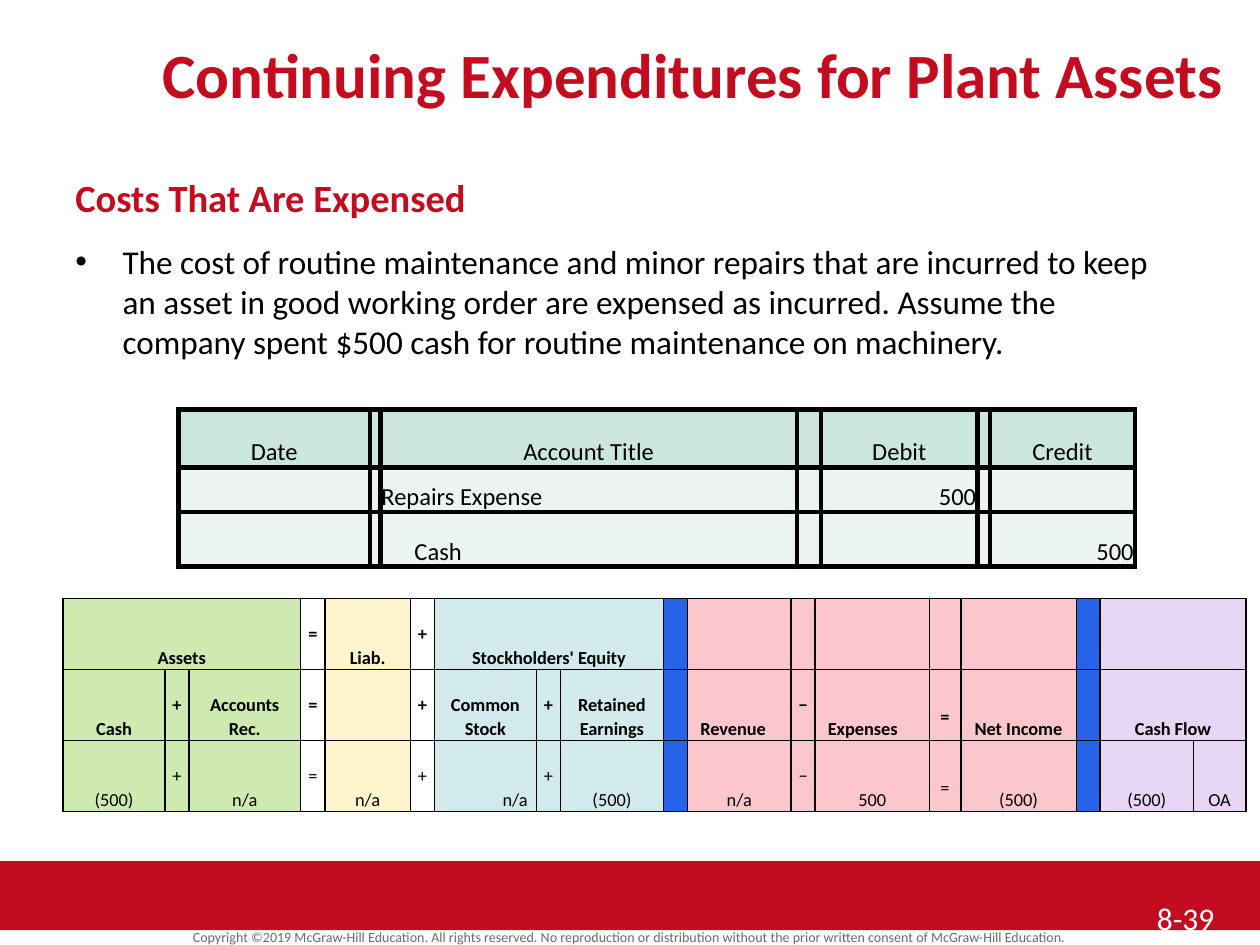
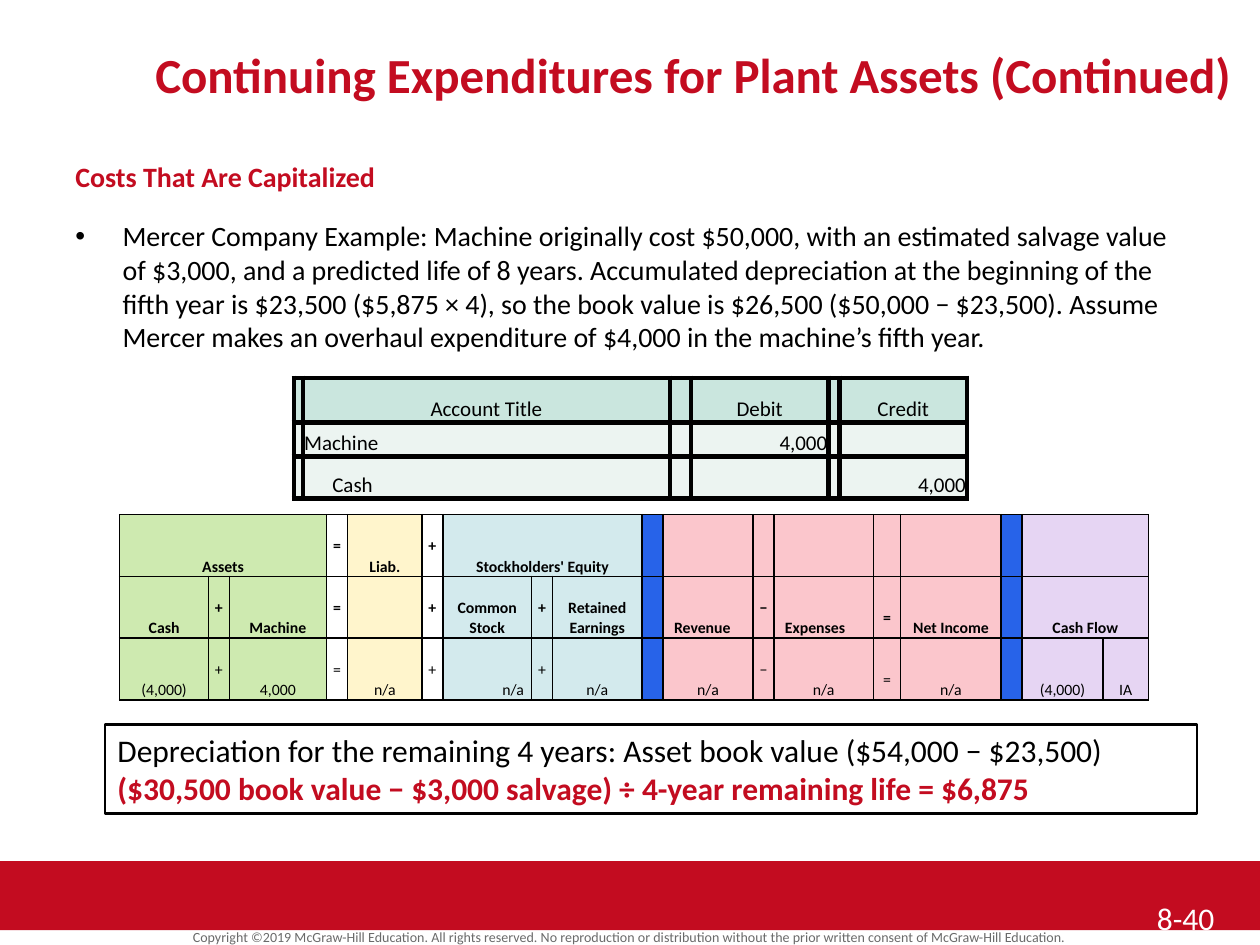
"""Build two slides on continuing expenditures for plant assets."""
import lxml.etree
import pptx
import pptx.dml.color
import pptx.enum.shapes
import pptx.enum.text
import pptx.oxml.ns
import pptx.util

Pt = pptx.util.Pt
qn = pptx.oxml.ns.qn
ALIGN = pptx.enum.text.PP_ALIGN
ANCHOR = pptx.enum.text.MSO_ANCHOR
RECT = pptx.enum.shapes.MSO_SHAPE.RECTANGLE

RED = "C30C20"
BLACK = "000000"
WHITE = "FFFFFF"
GREY = "6A6A6A"
HEAD = "CAE6DE"
PALE = "ECF4F1"
TINTS = {"G": "CEEAB0", "Y": "FFF5CC", "T": "D3EAED",
         "B": "2763E9", "P": "FBC6CC", "V": "E6D5F3"}
BANDS = "GGG-Y-TTTBPPPPPBVV"
MERGES = [(0, 0, 2), (0, 6, 8), (0, 16, 17), (1, 16, 17)]
SIGNS = "+=−"
SPANS = [58.3, 13.7, 63.8, 14, 48.8, 13.7, 58.3, 13.7, 59,
         13.7, 59.2, 13.7, 65.3, 18, 66, 13.7, 53.2, 30]
COLS = [109.5, 5.8, 238.3, 13.7, 89.3, 7.2, 82.8]
RISES = [33.1, 25.5, 31.2]
COPY = ("Copyright ©2019 McGraw-Hill Education. All rights reserved. "
        "No reproduction or distribution without the prior written "
        "consent of McGraw-Hill Education.")
TOP = ["Assets", "", "", "=", "Liab.", "+", "Stockholders' Equity"] + [""] * 11

PAGES = [
    {
        "title": "Continuing Expenditures for Plant Assets", "size": 36,
        "lead": "Costs That Are Expensed", "leadsize": 22, "leadgap": 1,
        "text": "The cost of routine maintenance and minor repairs that are "
                "incurred to keep an asset in good working order are expensed "
                "as incurred. Assume the company spent $500 cash for routine "
                "maintenance on machinery.",
        "textsize": 19, "before": 4, "number": "8-39",
        "asset": "Accounts Rec.",
        "values": ["(500)", "n/a", "n/a", "n/a", "(500)", "n/a", "500",
                   "(500)", "(500)", "OA"],
        "grid": (36, 342, 1, 10.5),
        "book": (102, 234, COLS, 1, 14),
        "entry": ("Repairs Expense", "500"), "note": [],
    },
    {
        "title": "Continuing Expenditures for Plant Assets (Continued)",
        "size": 28,
        "lead": "Costs That Are Capitalized", "leadsize": 16, "leadgap": 0.5,
        "text": "Mercer Company Example: Machine originally cost $50,000, with "
                "an estimated salvage value of $3,000, and a predicted life of "
                "8 years. Accumulated depreciation at the beginning of the "
                "fifth year is $23,500 ($5,875 × 4), so the book value is "
                "$26,500 ($50,000 − $23,500). Assume Mercer makes an overhaul "
                "expenditure of $4,000 in the machine’s fifth year.",
        "textsize": 16, "before": 8, "number": "8-40",
        "asset": "Machine",
        "values": ["(4,000)", "4,000", "n/a", "n/a", "n/a", "n/a", "n/a",
                   "n/a", "(4,000)", "IA"],
        "grid": (68.4, 294, 0.87, 9),
        "book": (168, 216, [wide * 0.88 for wide in COLS[1:]], 0.765, 12),
        "entry": ("Machine", "4,000"),
        "note": [("Depreciation for the remaining 4 years: Asset book value "
                  "($54,000 − $23,500)", BLACK, False),
                 ("($30,500 book value − $3,000 salvage) ÷ 4-year remaining "
                  "life = $6,875", RED, True)],
    },
]


def hue(code):
    return pptx.dml.color.RGBColor.from_string(code)


def ink(para, text, size, color=BLACK, bold=False, align=ALIGN.LEFT):
    if text:
        para.add_run().text = text
    else:
        lxml.etree.SubElement(para._p, qn("a:endParaRPr"), sz=str(int(size * 100)))
    para.alignment = align
    font = para.font
    font.name, font.size, font.bold = "Calibri", Pt(size), bold
    font.color.rgb = hue(color)


deck = pptx.Presentation()
deck.slide_width, deck.slide_height = Pt(720), Pt(540)

for page in PAGES:
    shapes = deck.slides.add_slide(deck.slide_layouts[6]).shapes

    band = shapes.add_shape(RECT, Pt(0), Pt(492), Pt(720), Pt(39.5))
    band.shadow.inherit = False
    band.fill.solid()
    band.fill.fore_color.rgb = hue(RED)
    band.line.fill.background()

    frames = []
    for box in [(0, 528.5, 720, 13.5), (72, 18, 648, 48.2),
                (36, 96, 648, 372), (654, 510, 66, 30)]:
        frame = shapes.add_textbox(*map(Pt, box)).text_frame
        frame.word_wrap = True
        frames.append(frame)
    legal, title, body, number = frames
    legal.margin_top = legal.margin_bottom = 0
    legal.vertical_anchor = title.vertical_anchor = ANCHOR.MIDDLE
    ink(legal.paragraphs[0], COPY, 8, GREY, align=ALIGN.CENTER)
    ink(title.paragraphs[0], page["title"], page["size"], RED, True, ALIGN.CENTER)
    ink(number.paragraphs[0], page["number"], 18, WHITE)

    lead = body.paragraphs[0]
    lead.line_spacing = page["leadgap"]
    lead.space_after = Pt(8)
    ink(lead, page["lead"], page["leadsize"], RED, True)
    point = body.add_paragraph()
    point.space_before, point.space_after = Pt(page["before"]), Pt(8)
    props = point._p.get_or_add_pPr()
    props.set("marL", str(Pt(27)))
    props.set("indent", str(-Pt(27)))
    lxml.etree.SubElement(props, qn("a:buFont"), typeface="Arial")
    lxml.etree.SubElement(props, qn("a:buChar"), char="•")
    ink(point, page["text"], page["textsize"])

    cash, asset, debt, stock, kept, sales, cost, net, flow, kind = page["values"]
    left, top, scale, size = page["grid"]
    grid = {
        "left": left, "top": top, "size": size, "line": 1,
        "wide": [span * scale for span in SPANS], "tall": [40.6 * scale] * 3,
        "rows": [
            TOP,
            ["Cash", "+", page["asset"], "=", "", "+", "Common Stock", "+",
             "Retained Earnings", "", "Revenue", "−", "Expenses", "=",
             "Net Income", "", "Cash Flow", ""],
            [cash, "+", asset, "=", debt, "+", stock, "+", kept, "", sales,
             "−", cost, "=", net, "", flow, kind]],
        "merges": MERGES,
    }
    left, top, wide, scale, size = page["book"]
    item, sum_ = page["entry"]
    rows = [["Date", "", "Account Title", "", "Debit", "", "Credit"],
            ["", "", item, "", sum_, "", ""],
            ["", "", "Cash", "", "", "", sum_]]
    book = {
        "left": left, "top": top, "size": size, "line": 3,
        "wide": wide, "tall": [rise * scale for rise in RISES],
        "rows": [row[-len(wide):] for row in rows], "merges": [],
    }

    for spec in (grid, book):
        wide, tall, size = spec["wide"], spec["tall"], spec["size"]
        table = shapes.add_table(
            len(tall), len(wide), Pt(spec["left"]), Pt(spec["top"]),
            Pt(sum(wide)), Pt(sum(tall))).table
        table.first_row = table.horz_banding = False
        for col, span in zip(table.columns, wide):
            col.width = Pt(span)
        for row, rise in zip(table.rows, tall):
            row.height = Pt(rise)
        for r, first, last in spec["merges"]:
            table.cell(r, first).merge(table.cell(r, last))

        for r, row in enumerate(spec["rows"]):
            for c, text in enumerate(row):
                cell = table.cell(r, c)
                cell.vertical_anchor = ANCHOR.BOTTOM
                para = cell.text_frame.paragraphs[0]
                align, bold, foot = ALIGN.CENTER, False, 0
                if spec is grid:
                    shade = TINTS.get(BANDS[c])
                    inset = near = size * 0.48
                    head, bold = 0, r < 2
                    para.line_spacing = 1.07
                    if text and text in SIGNS:
                        inset = near = 0
                        foot = size * (0.65 if c == 13 else 1.3)
                    elif text in ("Revenue", "Expenses"):
                        align, near = ALIGN.LEFT, size * 0.7
                    elif r == 2 and c == 6:
                        align = ALIGN.RIGHT
                else:
                    shade = PALE if r else HEAD
                    inset = near = head = 0.7
                    if r:
                        align = ALIGN.RIGHT if text[:1].isdigit() else ALIGN.LEFT
                    if text == "Cash":
                        near = size * 1.4
                cell.margin_left, cell.margin_right = Pt(near), Pt(inset)
                cell.margin_top, cell.margin_bottom = Pt(head), Pt(foot)
                ink(para, text, size, bold=bold, align=align)
                if shade:
                    cell.fill.solid()
                    cell.fill.fore_color.rgb = hue(shade)
                else:
                    cell.fill.background()
                props = cell._tc.get_or_add_tcPr()
                for spot, side in enumerate("LRTB"):
                    edge = lxml.etree.Element(
                        qn("a:ln" + side), w=str(Pt(spec["line"])))
                    fill = lxml.etree.SubElement(edge, qn("a:solidFill"))
                    lxml.etree.SubElement(fill, qn("a:srgbClr"), val=BLACK)
                    props.insert(spot, edge)

    if page["note"]:
        note = shapes.add_shape(RECT, Pt(60), Pt(414), Pt(624), Pt(51))
        note.shadow.inherit = False
        note.fill.background()
        note.line.color.rgb = hue(BLACK)
        note.line.width = Pt(1.5)
        frame = note.text_frame
        frame.word_wrap = True
        frame.vertical_anchor = ANCHOR.MIDDLE
        for i, (text, color, bold) in enumerate(page["note"]):
            para = frame.add_paragraph() if i else frame.paragraphs[0]
            ink(para, text, 18, color, bold)

deck.save("out.pptx")
